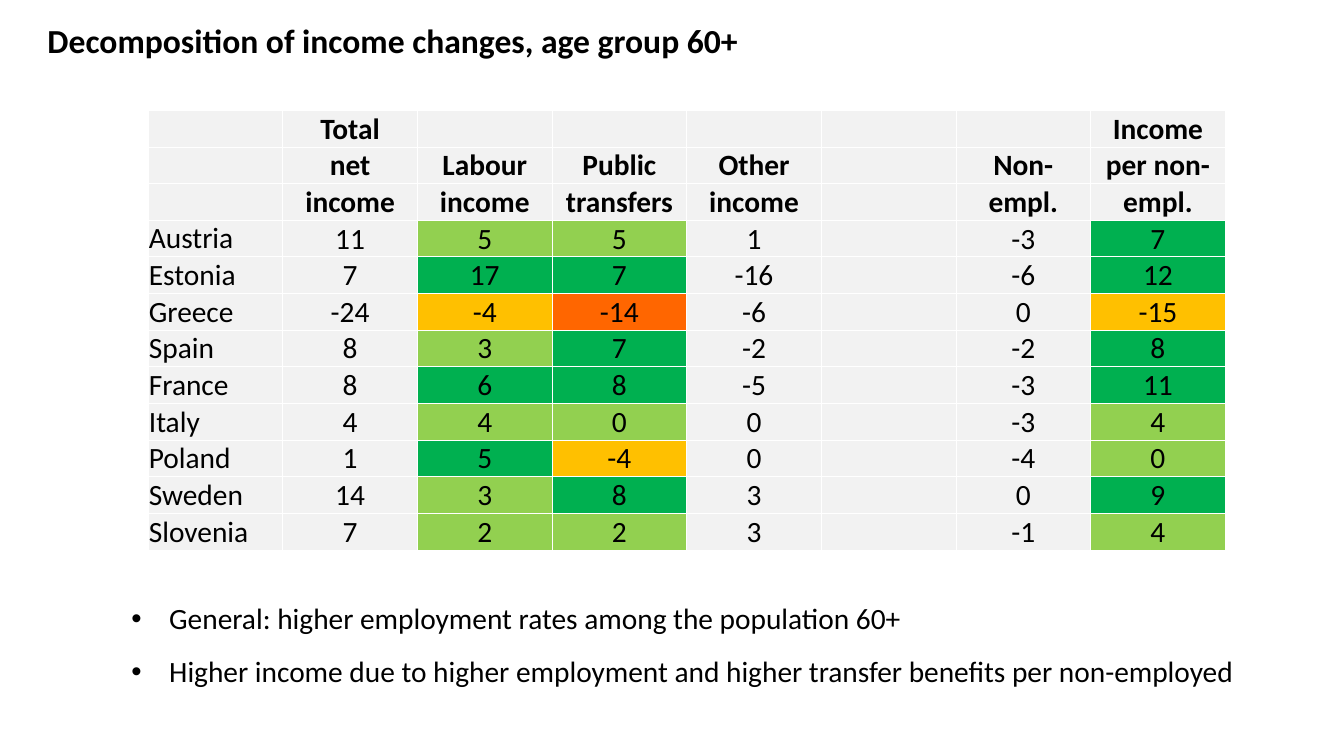
from lxml import etree
from pptx import Presentation
from pptx.dml.color import RGBColor
from pptx.enum.text import MSO_ANCHOR, PP_ALIGN
from pptx.oxml.ns import qn
from pptx.util import Inches, Pt

LEFT, CENTER = PP_ALIGN.LEFT, PP_ALIGN.CENTER
TOP, MIDDLE, BOTTOM = MSO_ANCHOR.TOP, MSO_ANCHOR.MIDDLE, MSO_ANCHOR.BOTTOM

THEME = {
    "font": "Calibri", "title": 32, "body": 28,
    "text": "000000", "border": "FFFFFF", "plain": "F2F2F2",
    "strong gain": "00B050", "gain": "92D050",
    "loss": "FFC000", "strong loss": "FF6600",
}

# Content
TITLE = "Decomposition of income changes, age group 60+"
HEADER = [
    ("", "Total", "", "", "", "", "", "Income"),
    ("", "net", "Labour", "Public", "Other", "", "Non-", "per non-"),
    ("", "income", "income", "transfers", "income", "", "empl.", "empl."),
]
COUNTRIES = [
    ("Austria", 11, 5, 5, 1, "", -3, 7),
    ("Estonia", 7, 17, 7, -16, "", -6, 12),
    ("Greece", -24, -4, -14, -6, "", 0, -15),
    ("Spain", 8, 3, 7, -2, "", -2, 8),
    ("France", 8, 6, 8, -5, "", -3, 11),
    ("Italy", 4, 4, 0, 0, "", -3, 4),
    ("Poland", 1, 5, -4, 0, "", -4, 0),
    ("Sweden", 14, 3, 8, 3, "", 0, 9),
    ("Slovenia", 7, 2, 2, 3, "", -1, 4),
]
# Ratings of labour income, public transfers and income per non-employed
RATED_COLUMNS = (2, 3, 7)
RATINGS = {
    "Austria": ("gain", "gain", "strong gain"),
    "Estonia": ("strong gain", "strong gain", "strong gain"),
    "Greece": ("loss", "strong loss", "loss"),
    "Spain": ("gain", "strong gain", "strong gain"),
    "France": ("strong gain", "strong gain", "strong gain"),
    "Italy": ("gain", "gain", "gain"),
    "Poland": ("strong gain", "loss", "gain"),
    "Sweden": ("gain", "strong gain", "strong gain"),
    "Slovenia": ("gain", "gain", "gain"),
}
BULLETS = [
    "General: higher employment rates among the population 60+",
    "Higher income due to higher employment and higher transfer benefits per non-employed",
]


def color(name):
    return RGBColor.from_string(THEME[name])


def add_span(para, text, size="body", bold=False):
    span = para.add_run()
    span.text = text
    span.font.name = THEME["font"]
    span.font.size = Pt(THEME[size])
    span.font.bold = bold
    span.font.color.rgb = color("text")


def add_box(page, left, top, width, height, anchor):
    box = page.shapes.add_textbox(*map(Inches, (left, top, width, height)))
    frame = box.text_frame
    frame.word_wrap = True
    frame.vertical_anchor = anchor
    return frame


def set_indent(para, margin, first_line):
    properties = para._p.get_or_add_pPr()
    properties.set("marL", str(Inches(margin)))
    properties.set("indent", str(Inches(first_line)))
    return properties


def add_borders(cell):
    properties = cell._tc.get_or_add_tcPr()
    for place, side in enumerate(("a:lnL", "a:lnR", "a:lnT", "a:lnB")):
        line = etree.Element(qn(side), w=str(Pt(1)))
        fill = etree.SubElement(line, qn("a:solidFill"))
        etree.SubElement(fill, qn("a:srgbClr"), val=THEME["border"])
        properties.insert(place, line)


def fill_cell(cell, value, fill, bold, is_name):
    cell.fill.solid()
    cell.fill.fore_color.rgb = color(fill)
    cell.margin_left = cell.margin_right = cell.margin_top = Inches(0.01)
    cell.margin_bottom = 0
    cell.vertical_anchor = BOTTOM if is_name else MIDDLE
    add_borders(cell)
    if value != "":
        para = cell.text_frame.paragraphs[0]
        para.alignment = LEFT if is_name else CENTER
        add_span(para, str(value), bold=bold)


def add_income_table(page):
    rows = HEADER + COUNTRIES
    width, height = Inches(14.25), Inches(5.82)
    table = page.shapes.add_table(
        len(rows), len(rows[0]), Inches(1.96), Inches(1.46), width, height).table
    table.first_row = table.horz_banding = False
    for column in table.columns:
        column.width = width // len(rows[0])
    for r, values in enumerate(rows):
        table.rows[r].height = height // len(rows)
        fills = dict(zip(RATED_COLUMNS, RATINGS.get(values[0], ())))
        for c, value in enumerate(values):
            fill_cell(table.cell(r, c), value, fills.get(c, "plain"),
                      bold=r < len(HEADER), is_name=c == 0)


def add_bullets(page):
    frame = add_box(page, 1.64, 7.66, 15.12, 1.43, TOP)
    for i, text in enumerate(BULLETS):
        para = frame.add_paragraph() if i else frame.paragraphs[0]
        para.line_spacing = 1.5
        properties = set_indent(para, 0.5, -0.5)
        etree.SubElement(properties, qn("a:buFont"), typeface="Arial")
        etree.SubElement(properties, qn("a:buChar"), char="•")
        add_span(para, text)


def main():
    deck = Presentation()
    deck.slide_width, deck.slide_height = Inches(17.78), Inches(10)
    page = deck.slides.add_slide(deck.slide_layouts[6])

    # Title
    para = add_box(page, 0, 0, 17.78, 1.06, MIDDLE).paragraphs[0]
    set_indent(para, 0.53, 0)
    add_span(para, TITLE, "title", bold=True)

    # Table and conclusions
    add_income_table(page)
    add_bullets(page)
    deck.save("out.pptx")


if __name__ == "__main__":
    main()
